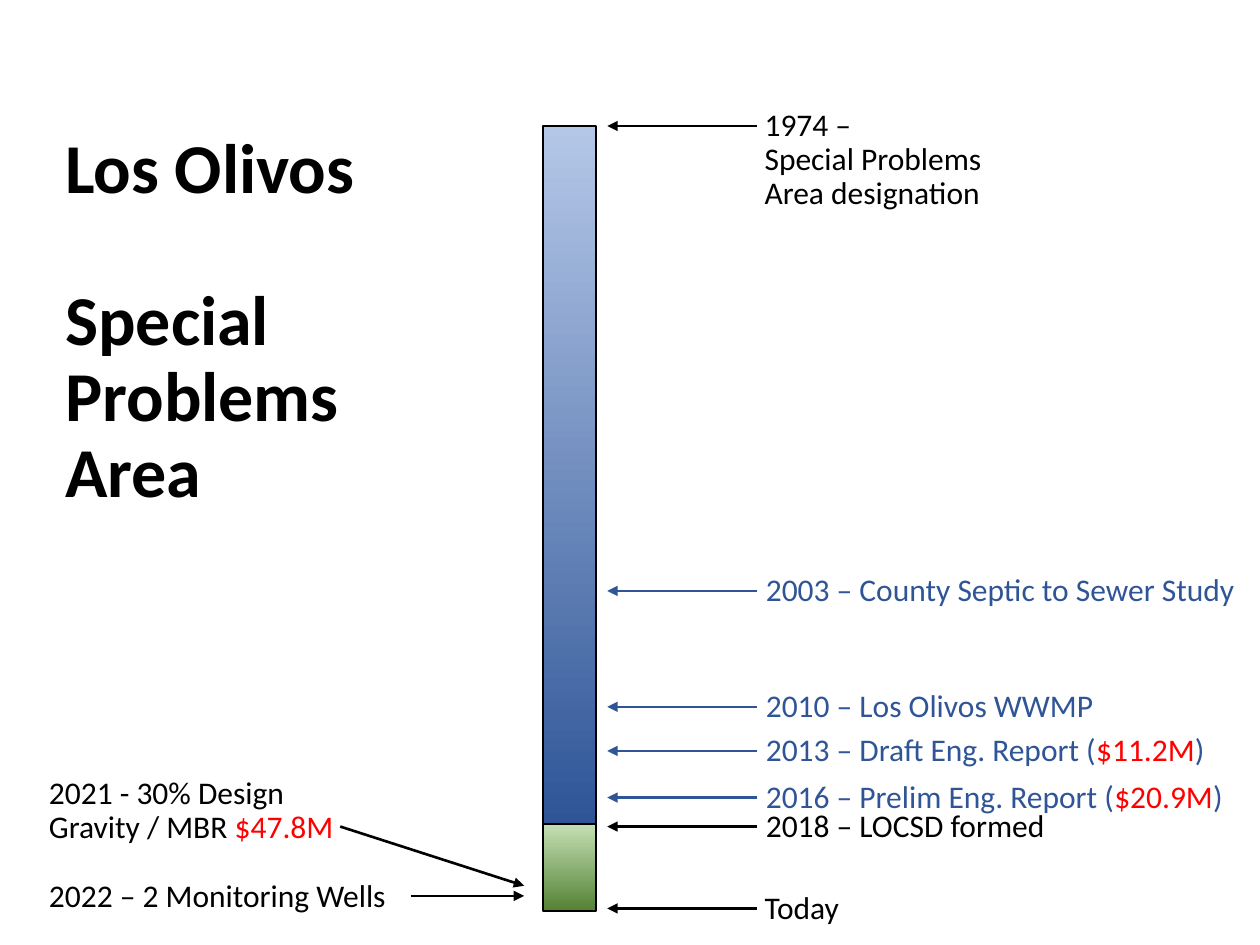
from dataclasses import dataclass

from lxml import etree
from pptx import Presentation, util as u
from pptx.dml.color import RGBColor
from pptx.enum import shapes, text
from pptx.oxml.ns import qn

PX = u.Inches(1) // 100
BLACK, BLUE, RED = "000000", "2F5597", "FF0000"
ARROW_START, ARROW_END = 601, 482
LABEL_RISE = 18


@dataclass
class Era:
    top: int
    bottom: int
    light: str
    dark: str


@dataclass
class Event:
    y: int
    lines: list[str]
    color: str = BLACK
    cost: str = ""
    left: int = 598
    width: int = 400
    height: int = 69


@dataclass
class Arrow:
    x1: int
    y1: int
    x2: int
    y2: int
    color: str = BLACK


ERAS = [
    Era(100, 654, "B4C7E7", BLUE),
    Era(654, 723, "C5E0B4", "548235"),
]
EVENTS = [
    Event(100, ["1974 –", "Special Problems\vArea designation"],
          left=597, width=263, height=143),
    Event(469, ["2003 – County Septic to Sewer Study"], BLUE),
    Event(561, ["2010 – Los Olivos WWMP"], BLUE),
    Event(596, ["2013 – Draft Eng. Report ($11.2M)"], BLUE, "$11.2M"),
    Event(633, ["2016 – Prelim Eng. Report ($20.9M)"], BLUE, "$20.9M"),
    Event(656, ["2018 – LOCSD formed"], width=263),
    Event(721, ["Today"], left=597, width=120, height=40),
]
PROJECT_ARROWS = [Arrow(270, 656, 416, 703), Arrow(326, 711, 416, 711)]


def rgb(color: str) -> RGBColor:
    return RGBColor.from_string(color)


def add_text(slide, left: int, top: int, width: int, height: int, lines: list[str],
             color: str = BLACK, cost: str = "", size: int = 18, bold: bool = False,
             gap: int = 0, anchor=text.MSO_ANCHOR.TOP) -> None:
    """Write one paragraph per line, with the cost in red and gap points between."""
    frame = slide.shapes.add_textbox(*(n * PX for n in (left, top, width, height))).text_frame
    frame.word_wrap = True
    frame.vertical_anchor = anchor
    for i, line in enumerate(lines):
        paragraph = frame.add_paragraph() if i else frame.paragraphs[0]
        paragraph.line_spacing = 0.9
        if i and gap:
            paragraph.space_before = u.Pt(gap)
        font = paragraph.font
        font.name, font.size, font.bold = "Calibri", u.Pt(size), bold
        font.color.rgb = rgb(color)
        if not cost or cost not in line:
            paragraph.text = line
            continue
        before, after = line.split(cost)
        for j, part in enumerate(before.split("\v")):
            if j:
                paragraph.add_line_break()
            paragraph.add_run().text = part
        amount = paragraph.add_run()
        amount.text = cost
        amount.font.color.rgb = rgb(RED)
        if after:
            paragraph.add_run().text = after


def add_era(slide, era: Era) -> None:
    bar = slide.shapes.add_shape(shapes.MSO_SHAPE.RECTANGLE, 431 * PX, era.top * PX,
                                 42 * PX, (era.bottom - era.top) * PX)
    bar.shadow.inherit = False
    bar.fill.gradient()
    bar.fill.gradient_angle = 270
    for stop, color in zip(bar.fill.gradient_stops, (era.light, era.dark)):
        stop.color.rgb = rgb(color)
    bar.line.color.rgb = rgb(BLACK)
    bar.line.width = u.Pt(1)


def add_arrow(slide, arrow: Arrow) -> None:
    line = slide.shapes.add_connector(
        shapes.MSO_CONNECTOR.STRAIGHT,
        *(n * PX for n in (arrow.x1, arrow.y1, arrow.x2, arrow.y2)))
    line.line.color.rgb = rgb(arrow.color)
    line.line.width = u.Pt(1.5)
    etree.SubElement(line.line._get_or_add_ln(), qn("a:tailEnd"), type="triangle")
    etree.SubElement(line._element.spPr, qn("a:effectLst"))


def main() -> None:
    deck = Presentation()
    deck.slide_width, deck.slide_height = 1000 * PX, 750 * PX
    slide = deck.slides.add_slide(deck.slide_layouts[6])

    add_text(slide, 42, 102, 357, 308, ["Los Olivos", "Special Problems Area"],
             size=40, bold=True, gap=44, anchor=text.MSO_ANCHOR.MIDDLE)
    for era in ERAS:
        add_era(slide, era)
    for event in EVENTS:
        add_arrow(slide, Arrow(ARROW_START, event.y, ARROW_END, event.y, event.color))
        add_text(slide, event.left, event.y - LABEL_RISE, event.width, event.height,
                 event.lines, event.color, event.cost)
    for arrow in PROJECT_ARROWS:
        add_arrow(slide, arrow)
    add_text(slide, 29, 612, 292, 120,
             ["2021 - 30% Design\vGravity / MBR $47.8M", "2022 – 2 Monitoring Wells"],
             cost="$47.8M", gap=20)

    deck.save("out.pptx")


if __name__ == "__main__":
    main()
